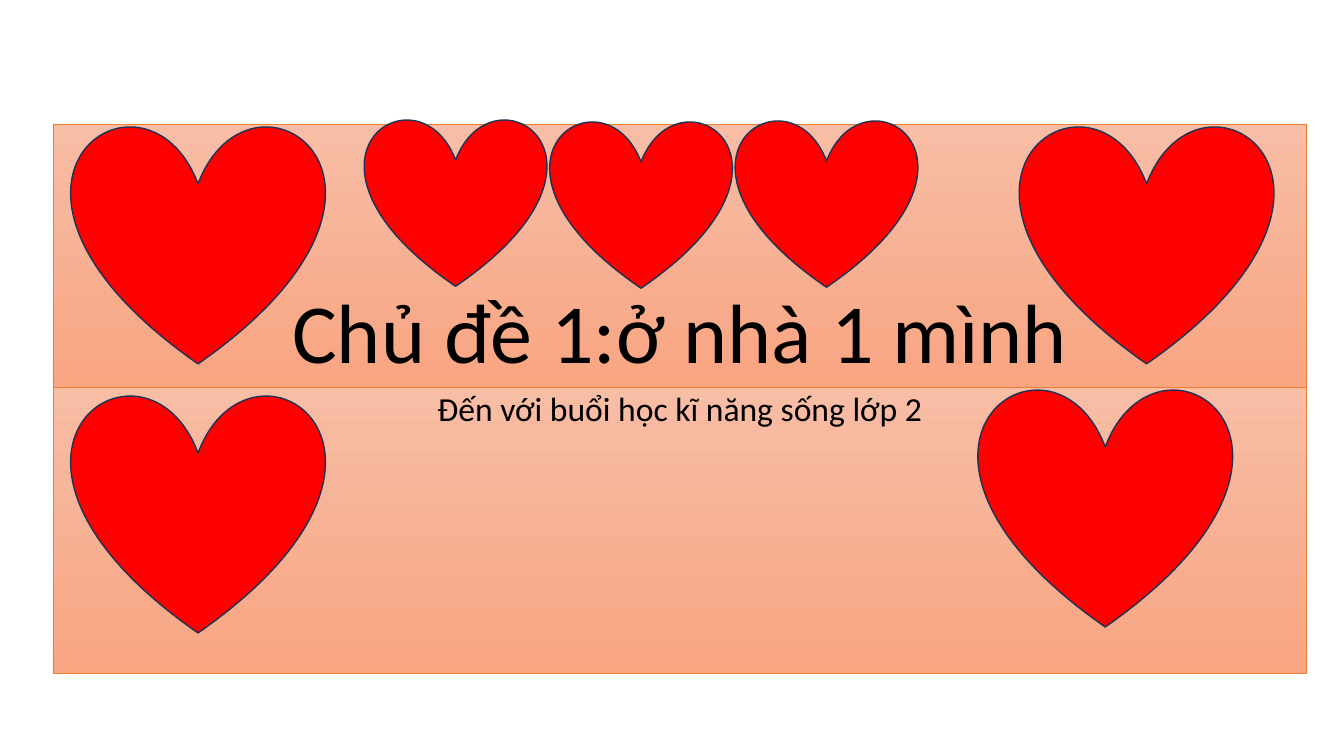
from dataclasses import dataclass

from pptx import Presentation
from pptx.dml.color import RGBColor
from pptx.enum.shapes import MSO_SHAPE
from pptx.enum.text import MSO_ANCHOR, MSO_AUTO_SIZE, PP_ALIGN
from pptx.util import Pt

RECT, HEART = MSO_SHAPE.RECTANGLE, MSO_SHAPE.HEART
TOP, BOTTOM = MSO_ANCHOR.TOP, MSO_ANCHOR.BOTTOM
CENTER, NO_FIT = PP_ALIGN.CENTER, MSO_AUTO_SIZE.NONE
TITLE_ONLY = 5


@dataclass(frozen=True)
class Theme:
    font: str = "Calibri"
    title_size: int = 60
    subtitle_size: int = 24
    text: RGBColor = RGBColor(0, 0, 0)
    band_top: RGBColor = RGBColor(0xF7, 0xBD, 0xA5)
    band_bottom: RGBColor = RGBColor(0xF8, 0xA5, 0x82)
    band_line: RGBColor = RGBColor(0xED, 0x7D, 0x31)
    heart: RGBColor = RGBColor(0xFF, 0, 0)
    heart_line: RGBColor = RGBColor(0x1E, 0x32, 0x56)


THEME = Theme()
TITLE_BOX = (38.16, 88.56, 894.96, 187.92)
SUBTITLE_BOX = (38.16, 276.48, 894.96, 204.48)
BIG_HEART = (180.72, 171.36)
SMALL_HEART = (129.6, 120.24)


def style_band(sp, text, size, anchor):
    """Give a band its gradient, outline and one centred line of text."""
    sp.fill.gradient()
    sp.fill.gradient_angle = 270
    for stop, color in zip(sp.fill.gradient_stops, (THEME.band_top, THEME.band_bottom)):
        stop.color.rgb = color
    sp.line.color.rgb = THEME.band_line
    sp.line.width = Pt(0.5)
    tf = sp.text_frame
    tf.word_wrap = True
    tf.auto_size = NO_FIT
    tf.vertical_anchor = anchor
    p = tf.paragraphs[0]
    p.alignment = CENTER
    p.line_spacing = 0.9
    r = p.add_run()
    r.text = text
    r.font.name = THEME.font
    r.font.size = Pt(size)
    r.font.color.rgb = THEME.text


def add_heart(slide, x, y, size):
    sp = slide.shapes.add_shape(HEART, Pt(x), Pt(y), *map(Pt, size))
    sp.shadow.inherit = False
    sp.fill.solid()
    sp.fill.fore_color.rgb = THEME.heart
    sp.line.color.rgb = THEME.heart_line
    sp.line.width = Pt(1)


def add_title_band(slide, box):
    x, y, _, _ = box
    title = slide.shapes.title
    title.left, title.top, title.width, title.height = map(Pt, box)
    style_band(title, "Chủ đề 1:ở nhà 1 mình", THEME.title_size, BOTTOM)
    for dx in (12.96, 690.48):
        add_heart(slide, x + dx, y, BIG_HEART)
    for i, rise in enumerate((4.3, 2.9, 3.6)):
        add_heart(slide, x + 222.48 + i * 132.48, y - rise, SMALL_HEART)


def add_subtitle_band(slide, box):
    x, y, _, _ = box
    sp = slide.shapes.add_shape(RECT, *map(Pt, box))
    sp.shadow.inherit = False
    style_band(sp, "Đến với buổi học kĩ năng sống lớp 2", THEME.subtitle_size, TOP)
    for dx, dy in ((12.96, 4.3), (660.96, 0)):
        add_heart(slide, x + dx, y + dy, BIG_HEART)


def main():
    prs = Presentation()
    prs.slide_width, prs.slide_height = Pt(960), Pt(540)
    slide = prs.slides.add_slide(prs.slide_layouts[TITLE_ONLY])
    add_title_band(slide, TITLE_BOX)
    add_subtitle_band(slide, SUBTITLE_BOX)
    prs.save("out.pptx")


if __name__ == "__main__":
    main()
